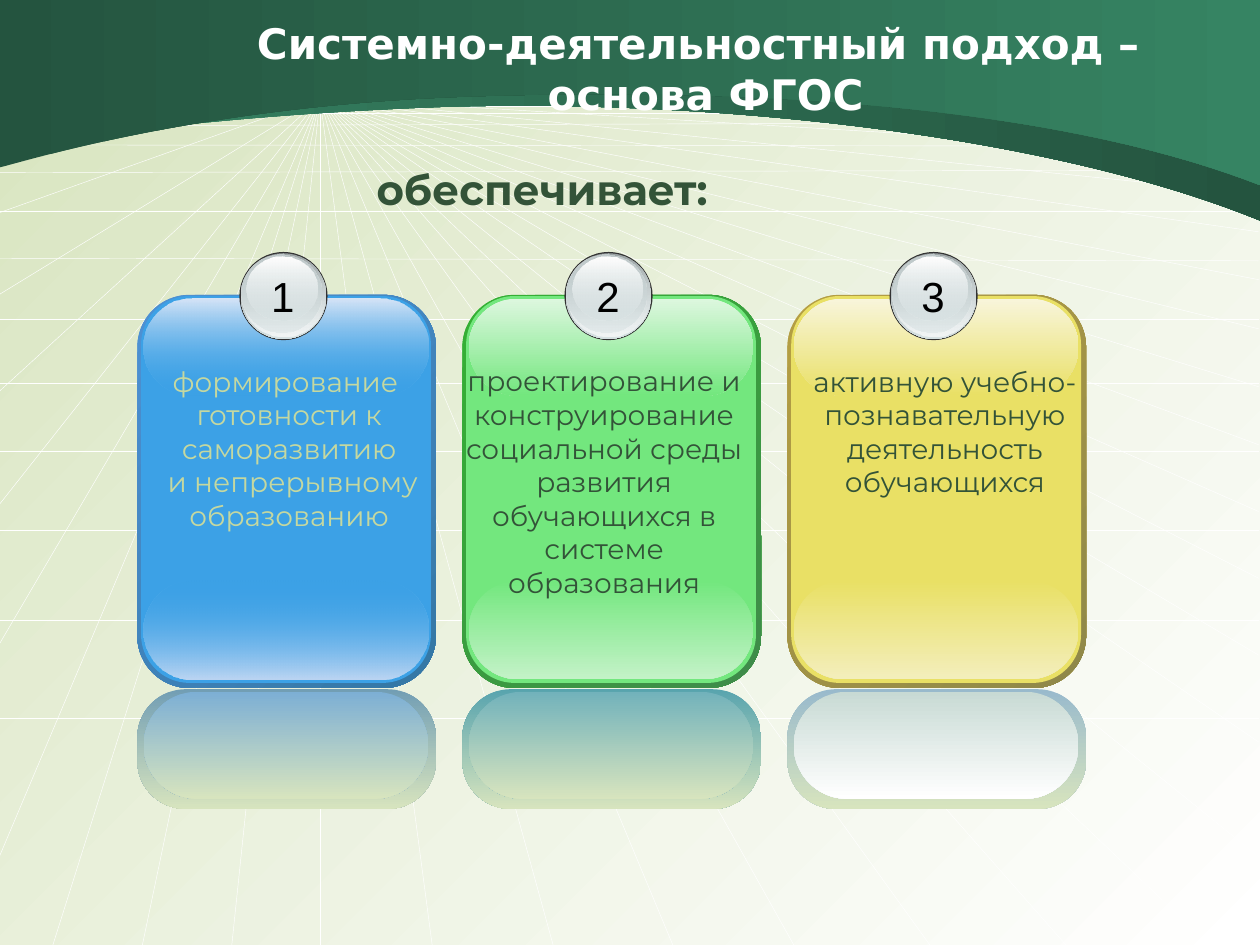
from dataclasses import dataclass

from lxml.etree import SubElement
from pptx import Presentation
from pptx.dml.color import RGBColor
from pptx.enum.shapes import MSO_CONNECTOR, MSO_SHAPE
from pptx.enum.text import MSO_ANCHOR, MSO_AUTO_SIZE, PP_ALIGN
from pptx.oxml.ns import qn
from pptx.util import Inches, Pt


@dataclass(frozen=True)
class Theme:
    white: str = "FFFFFF"
    black: str = "000000"
    ink: str = "335338"
    pale_ink: str = "C5D8A0"
    meadow: str = "D7E4BE"
    green_dark: str = "24543F"
    green_light: str = "368463"
    ring: str = "333333"
    silver: str = "D6E1E2"
    silver_dark: str = "99A1A2"
    silver_mid: str = "C1CBCC"
    silver_light: str = "F2F5F5"
    heading_font: str = "DejaVu Sans"
    body_font: str = "Montserrat"
    number_font: str = "Arial"
    heading_size: int = 24
    body_size: int = 16


theme = Theme()


def paint(fill, colours, angle=90, alphas=(100, 100)):
    """Fill with one solid colour or a two-colour gradient, angle clockwise."""
    if len(colours) == 1:
        fill.solid()
        fill.fore_color.rgb = RGBColor.from_string(colours[0])
        return
    fill.gradient()
    fill.gradient_angle = -angle % 360
    for stop, colour, alpha in zip(fill.gradient_stops, colours, alphas):
        stop.color.rgb = RGBColor.from_string(colour)
        if alpha < 100:
            node = stop._gs.find(qn("a:srgbClr"))
            SubElement(node, qn("a:alpha")).set("val", str(alpha * 1000))


def write(box, text, font, size, colour, bold=False, align=PP_ALIGN.CENTER,
          wrap=True, fit=MSO_AUTO_SIZE.SHAPE_TO_FIT_TEXT):
    frame = box.text_frame
    frame.text = text
    frame.word_wrap = wrap
    frame.auto_size = fit
    for para in frame.paragraphs:
        para.alignment = align
        for span in para.runs:
            span.font.name = font
            span.font.size = Pt(size)
            span.font.bold = bold
            span.font.color.rgb = RGBColor.from_string(colour)


deck = Presentation()
deck.slide_width, deck.slide_height = Inches(10), Inches(7.5)
page = deck.slides.add_slide(deck.slide_layouts[5])
paint(page.background.fill, (theme.meadow, theme.white), 45)

# Perspective grid: rays from one hub, and near-horizontal lines
hub = (2.54, 0.78)
left_edge, right_edge = -0.01, 9.99
bottom_ends = [0.42, 1.13, 1.84, 2.54, 3.43, 4.39, 5.34, 6.3, 7.38, 8.46, 9.6]
right_ends = [1, 1.23, 1.54, 1.84, 2.22, 2.61, 3.07, 3.53, 4.06, 4.59, 5.2, 5.89, 6.8]
left_ends = [0.78, 0.97, 1.16, 1.69, 2.34, 3.11, 4.01, 5.12, 6.81]
levels = [(y, y) for y in (0.84, 0.9, 1.68, 2.53, 3.04, 3.58, 4.21, 4.92, 5.7)]
levels += [(1, 0.97), (1.15, 1.16), (1.37, 1.35), (2.05, 2.07)]
grid_lines = [(hub, (x, 7.5)) for x in bottom_ends]
grid_lines += [(hub, (right_edge, y)) for y in right_ends]
grid_lines += [(hub, (left_edge, y)) for y in left_ends]
grid_lines += [((left_edge, start), (right_edge, end)) for start, end in levels]
grid = page.shapes.add_group_shape()
for start, end in grid_lines:
    line = grid.shapes.add_connector(
        MSO_CONNECTOR.STRAIGHT, *(Inches(value) for value in start + end))
    line.line.color.rgb = RGBColor.from_string(theme.white)
    line.line.width = Pt(0.25)
    SubElement(line._element.spPr, qn("a:effectLst"))

# Header waves: two Bézier curves each, closed along the top edge
waves = [
    ([(-0.01, 1.19), (0.11, 1.18), (1.33, 0.93), (3.47, 0.85),
      (5.61, 0.78), (8.31, 1.06), (10, 1.75)], (theme.green_light, theme.green_dark)),
    ([(-0.01, 1.33), (0.11, 1.31), (1.51, 0.85), (3.64, 0.77),
      (5.77, 0.69), (8.31, 0.81), (10, 1.47)], (theme.green_dark, theme.green_light)),
]
for knots, colours in waves:
    outline = [(Inches(x), Inches(y)) for x, y in knots + [(10, 0), (-0.01, 0)]]
    builder = page.shapes.build_freeform(*outline[0])
    builder.add_line_segments(outline[1:])
    wave = builder.convert_to_shape()
    segments = list(wave._element.iter(qn("a:lnTo")))
    for first in (0, 3):
        curve = segments[first]
        curve.tag = qn("a:cubicBezTo")
        for segment in segments[first + 1:first + 3]:
            curve.append(segment[0])
            segment.getparent().remove(segment)
    wave.shadow.inherit = False
    wave.line.fill.background()
    paint(wave.fill, colours, 0)

title = page.shapes.title
page.shapes._spTree.append(title._element)
title.left, title.top = Inches(1.56), Inches(0.23)
title.width, title.height = Inches(8.08), Inches(0.62)
write(title, "Системно-деятельностный подход – \vоснова ФГОС", theme.heading_font,
      theme.heading_size, theme.white, bold=True, fit=MSO_AUTO_SIZE.NONE)
title.text_frame.vertical_anchor = MSO_ANCHOR.MIDDLE

# Cards: sheen_alpha is the opacity where the gloss meets the face
cards = [
    dict(edge=("4E91D4", "3477A4"), face="3CA1E6", top="D7E5F7", bottom="BDD6F3",
         sheen_alpha=0, outer=("729EB4", theme.meadow), inner=("7DAFD4", theme.meadow),
         ink=theme.pale_ink, place=(1.17, 2.25, 1.72),
         text="формирование \nготовности к саморазвитию\n и непрерывному образованию"),
    dict(edge=("34B034", "3F8B4A"), face="73E77E", top="DDF7DF", bottom="C3F2C7",
         sheen_alpha=100, outer=("58A4AE", theme.meadow), inner=("72B2BB", theme.meadow),
         ink=theme.ink, place=(3.59, 2.41, 2.26),
         text="проектирование и конструирование социальной среды развития "
              "обучающихся в системе образования"),
    dict(edge=("B59F43", "8F8849"), face="E9E065", top="F8F5DB", bottom="F3EEBB",
         sheen_alpha=100, outer=("99BACC", theme.meadow), inner=("C8DAD4", theme.white),
         ink=theme.ink, place=(6.33, 2.34, 1.45),
         text="активную учебно-познавательную деятельность обучающихся"),
]
# Badge layers: offset from card, top, width, height, colours, opacities
badge_layers = [
    (0.81, 2, 0.7, 0.7, (theme.ring,), (100, 100)),
    (0.82, 2.01, 0.68, 0.68, (theme.silver_dark, theme.silver), (100, 100)),
    (0.83, 2.01, 0.66, 0.66, (theme.silver, theme.silver_light), (0, 100)),
    (0.83, 2.02, 0.63, 0.62, (theme.silver_mid, theme.silver), (100, 48)),
    (0.87, 2.04, 0.56, 0.5, (theme.white, theme.silver), (100, 38)),
]
first_left, card_step = 1.09, 2.58
for number, card in enumerate(cards, start=1):
    left = first_left + card_step * (number - 1)
    group = page.shapes.add_group_shape()
    face, sheen = card["face"], card["sheen_alpha"]
    # offset, top, width, height, corner, colours, angle, opacities
    panels = [
        (0, 2.34, 2.37, 3.12, 0.175, card["edge"], 45, (100, 100)),
        (0.03, 2.35, 2.3, 3.07, 0.167, (face,), 0, (100, 100)),
        (0.05, 4.61, 2.26, 0.78, 0.5, (face, card["bottom"]), 90, (sheen, 100)),
        (0.05, 2.37, 2.26, 0.77, 0.5, (card["top"], face), 90, (100, sheen)),
        (0, 5.47, 2.37, 0.95, 0.404, card["outer"], 90, (100, 100)),
        (0.05, 5.49, 2.26, 0.85, 0.5, card["inner"], 90, (100, 100)),
    ]
    discs = [(x, y, w, h, None, colours, 90, alphas)
             for x, y, w, h, colours, alphas in badge_layers]
    for x, y, w, h, corner, colours, angle, alphas in panels + discs:
        kind = MSO_SHAPE.OVAL if corner is None else MSO_SHAPE.ROUNDED_RECTANGLE
        layer = group.shapes.add_shape(kind, Inches(left + x), Inches(y), Inches(w), Inches(h))
        if corner is not None:
            layer.adjustments[0] = corner
        layer.shadow.inherit = False
        layer.line.fill.background()
        paint(layer.fill, colours, angle, alphas)

    label = group.shapes.add_textbox(Inches(left + 0.96), Inches(2.1), Inches(0.39), Inches(0.5))
    write(label, str(number), theme.number_font, theme.heading_size, theme.black, wrap=False)
    text_left, text_width, text_height = card["place"]
    body = group.shapes.add_textbox(
        Inches(text_left), Inches(2.84), Inches(text_width), Inches(text_height))
    write(body, card["text"], theme.body_font, theme.body_size, card["ink"])

lead = page.shapes.add_textbox(Inches(2.89), Inches(1.25), Inches(3.28), Inches(0.5))
write(lead, "обеспечивает:", theme.body_font, theme.heading_size, theme.ink,
      bold=True, align=PP_ALIGN.LEFT)

deck.save("out.pptx")
